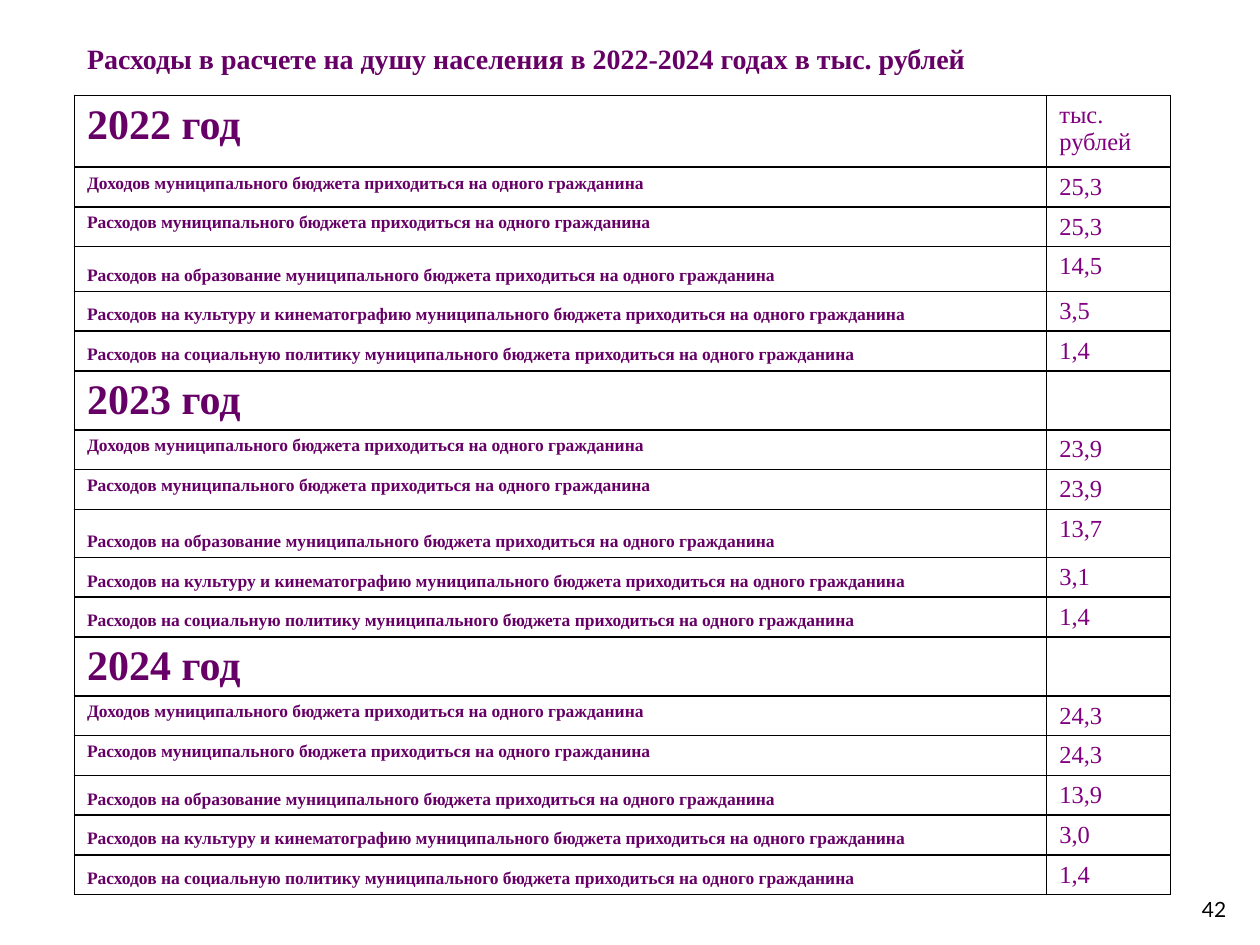
from dataclasses import dataclass

from lxml import etree
from pptx import Presentation
from pptx.dml.color import RGBColor
from pptx.enum import text
from pptx.oxml import ns
from pptx.util import Cm, Pt


@dataclass(frozen=True)
class Theme:
    serif: str = "Times New Roman"
    sans: str = "Lato"
    label: str = "660066"
    value: str = "800080"
    ink: str = "000000"
    title_pt: int = 16
    year_pt: int = 24
    label_pt: int = 10
    value_pt: int = 14
    number_pt: int = 12
    border_pt: int = 1


@dataclass(frozen=True)
class Year:
    heading: str
    unit: str
    heading_height: float
    education_height: float
    values: tuple[str, ...]


@dataclass(frozen=True)
class Row:
    label: str
    value: str
    height: float
    label_pt: int
    anchor: text.MSO_ANCHOR


THEME = Theme()
TOP, BOTTOM = text.MSO_ANCHOR.TOP, text.MSO_ANCHOR.BOTTOM
ROW_HEIGHT = 0.8
COLUMN_WIDTHS = (19.6, 2.5)
TITLE = "Расходы в расчете на душу населения в 2022-2024 годах в тыс. рублей"
SUFFIX = "муниципального бюджета приходиться на одного гражданина"
SUBJECTS = (
    ("Доходов", TOP),
    ("Расходов", TOP),
    ("Расходов на образование", BOTTOM),
    ("Расходов на культуру и кинематографию", BOTTOM),
    ("Расходов на социальную политику", BOTTOM),
)
EDUCATION = 2
YEARS = (
    Year("2022 год", "тыс. рублей", 1.44, 0.9, ("25,3", "25,3", "14,5", "3,5", "1,4")),
    Year("2023 год", "", 1.19, 0.97, ("23,9", "23,9", "13,7", "3,1", "1,4")),
    Year("2024 год", "", 1.19, 0.8, ("24,3", "24,3", "13,9", "3,0", "1,4")),
)


def year_rows(year: Year) -> list[Row]:
    rows = [Row(year.heading, year.unit, year.heading_height, THEME.year_pt, TOP)]
    for i, ((subject, anchor), value) in enumerate(zip(SUBJECTS, year.values)):
        height = year.education_height if i == EDUCATION else ROW_HEIGHT
        rows.append(Row(f"{subject} {SUFFIX}", value, height, THEME.label_pt, anchor))
    return rows


def set_text(tf, content: str, font: str, size: int, color: str, bold: bool = False) -> None:
    tf.text = content
    for r in tf.paragraphs[0].runs:
        r.font.name = font
        r.font.size = Pt(size)
        r.font.bold = bold
        r.font.color.rgb = RGBColor.from_string(color)


def set_borders(cell) -> None:
    tc_pr = cell._tc.get_or_add_tcPr()
    for i, side in enumerate(("a:lnL", "a:lnR", "a:lnT", "a:lnB")):
        ln = etree.Element(ns.qn(side), w=str(Pt(THEME.border_pt)))
        fill = etree.SubElement(ln, ns.qn("a:solidFill"))
        etree.SubElement(fill, ns.qn("a:srgbClr"), val=THEME.ink)
        tc_pr.insert(i, ln)


def add_title(s) -> None:
    sp = s.shapes.title
    sp.left, sp.top, sp.width, sp.height = Cm(1.5), Cm(0), Cm(21.6), Cm(2.46)
    tf = sp.text_frame
    set_text(tf, TITLE, THEME.serif, THEME.title_pt, THEME.label, True)
    tf.auto_size = text.MSO_AUTO_SIZE.NONE
    tf.vertical_anchor = text.MSO_ANCHOR.MIDDLE
    tf.margin_bottom = Cm(0.25)
    tf.paragraphs[0].alignment = text.PP_ALIGN.LEFT


def add_budget_table(s, rows: list[Row]) -> None:
    frame = s.shapes.add_table(
        len(rows), len(COLUMN_WIDTHS), Cm(1.5), Cm(1.93),
        Cm(sum(COLUMN_WIDTHS)), Cm(sum(row.height for row in rows)),
    )
    table = frame.table
    table.first_row = table.horz_banding = False
    for column, width in zip(table.columns, COLUMN_WIDTHS):
        column.width = Cm(width)
    for i, row in enumerate(rows):
        table.rows[i].height = Cm(row.height)
        label, value = table.cell(i, 0), table.cell(i, 1)
        set_text(label.text_frame, row.label, THEME.serif, row.label_pt, THEME.label, True)
        set_text(value.text_frame, row.value, THEME.serif, THEME.value_pt, THEME.value)
        label.vertical_anchor = row.anchor
        for cell in (label, value):
            cell.fill.background()
            set_borders(cell)


def add_page_number(s, number: str) -> None:
    sp = s.shapes.add_textbox(Cm(22.86), Cm(17.98), Cm(2.11), Cm(0.69))
    tf = sp.text_frame
    tf.word_wrap = True
    tf.vertical_anchor = text.MSO_ANCHOR.MIDDLE
    set_text(tf, number, THEME.sans, THEME.number_pt, THEME.ink)
    tf.paragraphs[0].alignment = text.PP_ALIGN.RIGHT


def main() -> None:
    prs = Presentation()
    prs.slide_width, prs.slide_height = Cm(25.4), Cm(19.05)
    s = prs.slides.add_slide(prs.slide_layouts.get_by_name("Title Only"))
    add_title(s)
    add_budget_table(s, [row for year in YEARS for row in year_rows(year)])
    add_page_number(s, "42")
    prs.save("out.pptx")


if __name__ == "__main__":
    main()
